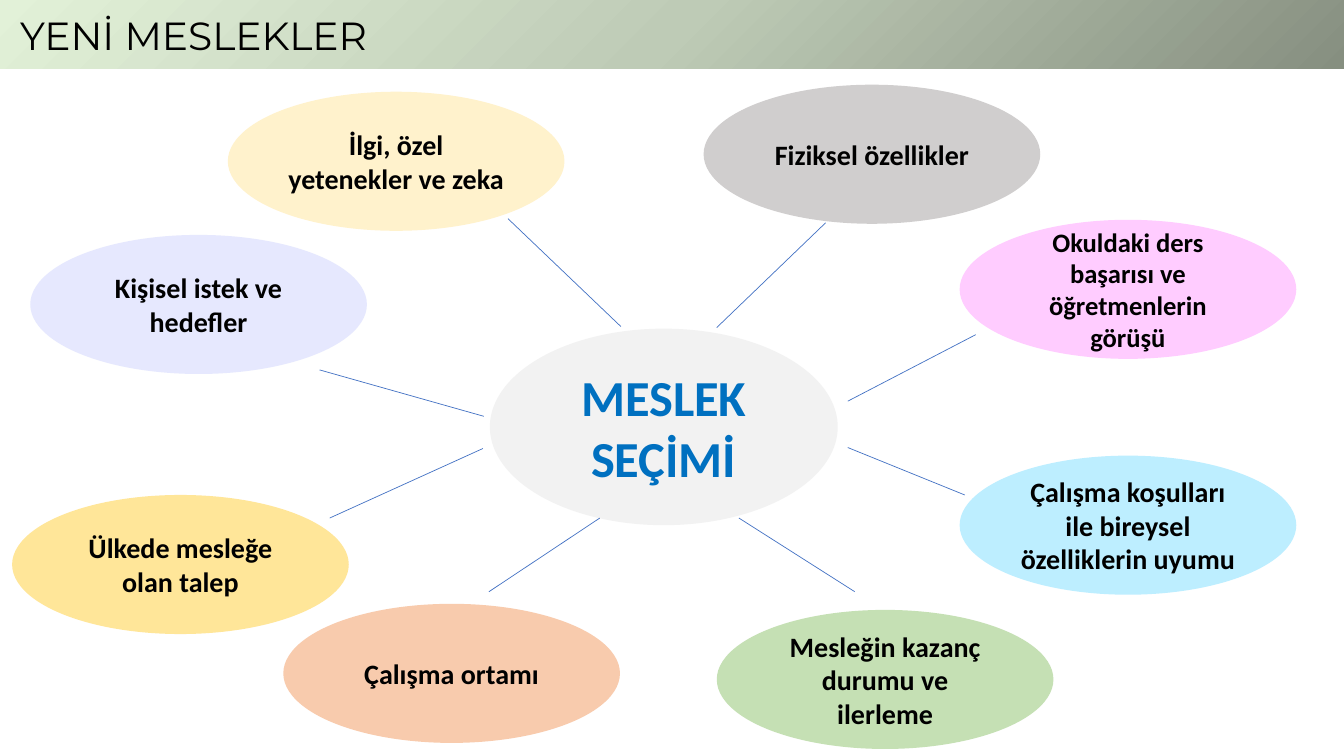
from copy import deepcopy

from pptx import Presentation
from pptx import util as u
from pptx.dml.color import RGBColor
from pptx.enum import shapes, text
from pptx.oxml.ns import qn
from lxml import etree

WIDE, HIGH = u.Inches(13.33), u.Inches(7.5)

HUES = {
    "ink": "000000", "ray": "4472C4", "core": "F2F2F2", "blue": "0070C0",
    "dark": "868F80", "mid": "BECBB6", "pale": "E2F1D8",
    "gray": "D0CECE", "cream": "FFF2CC", "lilac": "E6E8FE", "gold": "FFE699",
    "peach": "F8CBAD", "green": "C5E0B4", "pink": "FFCCFF", "sky": "BDEEFF",
}

# All lengths are percent of the slide's width or height
LEAF = (25.05, 18.4)
CORE = (36.45, 43.47, 25.88, 26)

# Words, hue, text size, left and top of the oval, ray from and to
LEAVES = [
    ("Fiziksel özellikler", "gray", 20, (52.35, 11.2),
     (53.33, 43.33, 61.43, 29.47)),
    ("İlgi, özel yetenekler ve zeka", "cream", 20, (16.95, 12.13),
     (37.8, 28.93, 46.2, 43.2)),
    ("Kişisel istek ve hedefler", "lilac", 20, (2.25, 31.07),
     (23.78, 48.93, 36, 55.07)),
    ("Ülkede mesleğe olan talep", "gold", 20, (0.9, 65.47),
     (24.53, 68.53, 35.93, 59.33)),
    ("Çalışma ortamı", "peach", 20, (21.08, 79.87),
     (36.38, 78.27, 44.63, 68.53)),
    ("Mesleğin kazanç durumu ve ilerleme", "green", 20, (53.33, 80.67),
     (63.6, 78.27, 54.98, 68.53)),
    ("Okuldaki ders başarısı ve öğretmenlerin görüşü", "pink", 19,
     (71.4, 29.07), (63.08, 53.07, 72.6, 44.27)),
    ("Çalışma koşulları ile bireysel özelliklerin uyumu", "sky", 20,
     (71.4, 60.27), (63.08, 59.2, 71.78, 65.47)),
]


def color(name):
    return RGBColor.from_string(HUES[name])


def place(x, y, w, h):
    """Turn percent shares into slide lengths."""
    return [round(part * side / 100)
            for part, side in zip((x, y, w, h), (WIDE, HIGH) * 2)]


def apply(thing, **form):
    for key, value in form.items():
        setattr(thing, key, value)


def write(shape, words, hue, align, **font):
    frame = shape.text_frame
    apply(frame, word_wrap=True, auto_size=text.MSO_AUTO_SIZE.NONE,
          vertical_anchor=text.MSO_ANCHOR.MIDDLE)
    para = frame.paragraphs[0]
    para.alignment = align
    run = para.add_run()
    run.text = words
    apply(run.font, **font)
    run.font.color.rgb = color(hue)


def banner(slide, words):
    title = slide.shapes.title
    apply(title, **dict(zip(("left", "top", "width", "height"),
                            place(0, 0, 100, 9.1))))
    # Three-stop gradient, dark at the lower right
    title.fill.gradient()
    title.fill.gradient_angle = 135
    first = title.fill.gradient_stops[0]
    first.color.rgb = color("dark")
    stops = title._element.spPr.find(qn("a:gradFill")).find(qn("a:gsLst"))
    stops.insert(1, deepcopy(stops[0]))
    for stop, hue, at in zip(title.fill.gradient_stops,
                             ("dark", "mid", "pale"), (0, 0.5, 1)):
        stop.color.rgb = color(hue)
        stop.position = at
    title.text_frame.margin_left = u.Inches(0.2)
    write(title, words, "ink", text.PP_ALIGN.LEFT,
          name="Montserrat", size=u.Pt(28))


def oval(slide, box, words, fill, size, ink="ink"):
    shape = slide.shapes.add_shape(shapes.MSO_SHAPE.OVAL, *place(*box))
    shape.shadow.inherit = False
    shape.fill.solid()
    shape.fill.fore_color.rgb = color(fill)
    shape.line.fill.background()
    write(shape, words, ink, text.PP_ALIGN.CENTER,
          name="Calibri", size=u.Pt(size), bold=True)


def ray(slide, ends):
    line = slide.shapes.add_connector(shapes.MSO_CONNECTOR.STRAIGHT,
                                      *place(*ends))
    line.line.color.rgb = color("ray")
    line.line.width = u.Pt(0.5)
    etree.SubElement(line._element.spPr, qn("a:effectLst"))


def main():
    deck = Presentation()
    apply(deck, slide_width=WIDE, slide_height=HIGH)
    slide = deck.slides.add_slide(deck.slide_layouts[5])
    banner(slide, "YENİ MESLEKLER")

    # Centre of the map
    oval(slide, CORE, "MESLEK SEÇİMİ", "core", 36, "blue")

    # Factors around it
    for words, hue, size, spot, ends in LEAVES:
        ray(slide, ends)
        oval(slide, spot + LEAF, words, hue, size)

    deck.save("out.pptx")


if __name__ == "__main__":
    main()
